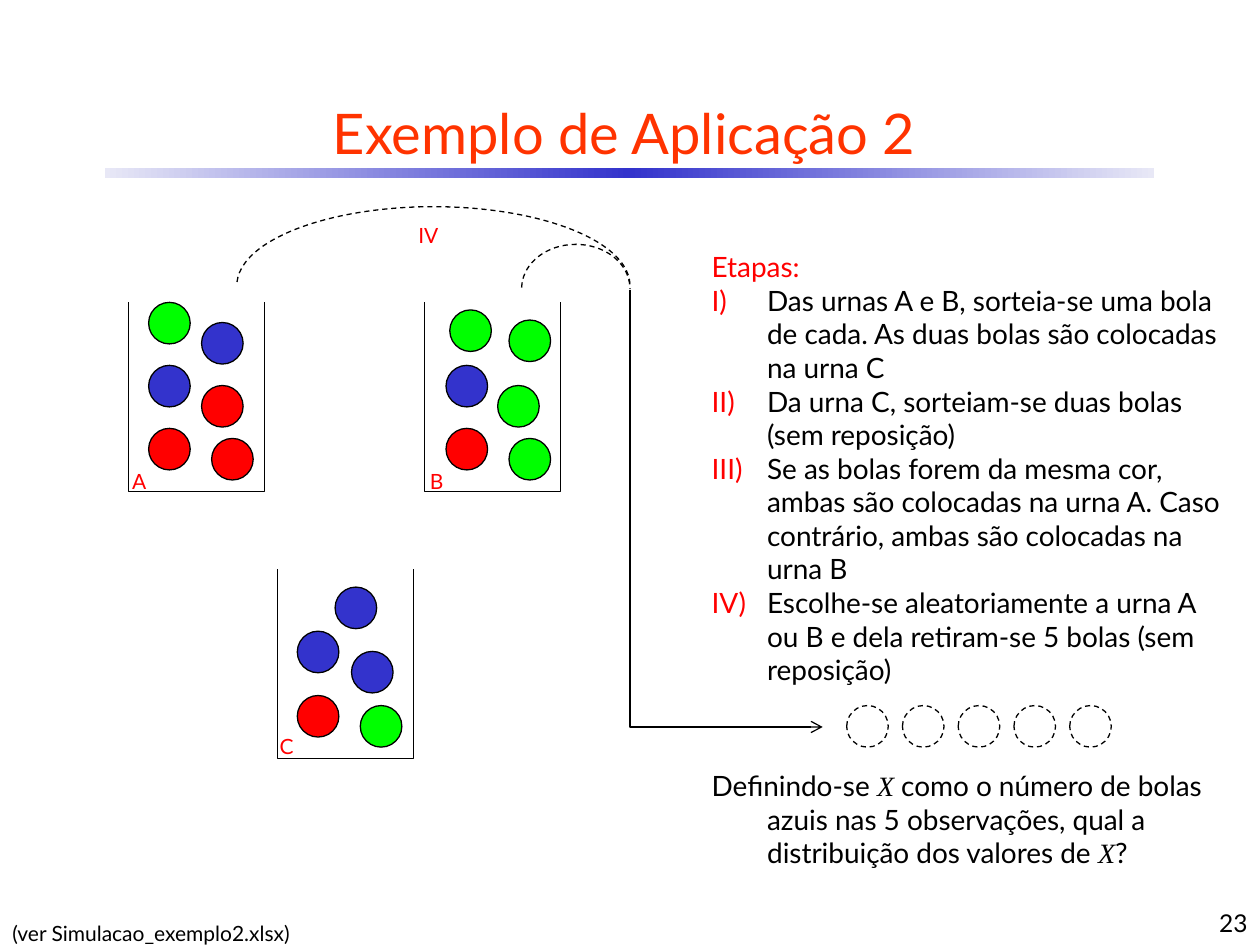
from lxml import etree
from pptx import Presentation
from pptx.dml.color import RGBColor
from pptx.enum.dml import MSO_LINE
from pptx.enum.shapes import MSO_CONNECTOR, MSO_SHAPE
from pptx.enum.text import MSO_ANCHOR, MSO_AUTO_SIZE, PP_ALIGN
from pptx.oxml.ns import qn
from pptx.util import Inches, Pt

OVAL, ARC, RECT = MSO_SHAPE.OVAL, MSO_SHAPE.ARC, MSO_SHAPE.RECTANGLE
LEFT, CENTER, RIGHT = PP_ALIGN.LEFT, PP_ALIGN.CENTER, PP_ALIGN.RIGHT
TOP, MIDDLE, BOTTOM = MSO_ANCHOR.TOP, MSO_ANCHOR.MIDDLE, MSO_ANCHOR.BOTTOM

# Content
COLORS = {"title": "FF3300", "red": "FF0000", "green": "00FF00", "blue": "3333CC",
          "pale": "E8E8F6", "black": "000000"}
SANS, SERIF = "Lato", "Times New Roman"
TITLE = "Exemplo de Aplicação 2"
STEPS_HEAD = "Etapas:"
STEPS = [
    "Das urnas A e B, sorteia-se uma bola de cada. As duas bolas são colocadas na urna C",
    "Da urna C, sorteiam-se duas bolas (sem reposição)",
    "Se as bolas forem da mesma cor, ambas são colocadas na urna A. "
    "Caso contrário, ambas são colocadas na urna B",
    "Escolhe-se aleatoriamente a urna A ou B e dela retiram-se 5 bolas (sem reposição)",
]
QUESTION = ["Definindo-se ", "X", " como o número de bolas azuis nas 5 observações, "
            "qual a distribuição dos valores de ", "X", "?"]
FOOTNOTE = "(ver Simulacao_exemplo2.xlsx)"
PAGE = "23"

# Urns: corner, label place, balls as (dx, dy, colour) from the corner
URN_W, URN_H, BALL = 1.08, 1.5, 0.33
URNS = [
    ("A", 1.02, 2.4, (0.95, 3.67, 0.3, 0.3),
     [(0.16, 0, "green"), (0.58, 0.16, "blue"), (0.16, 0.5, "blue"),
      (0.58, 0.66, "red"), (0.16, 1, "red"), (0.66, 1.08, "red")]),
    ("B", 3.37, 2.4, (3.31, 3.67, 0.31, 0.3),
     [(0.17, 0.5, "blue"), (0.58, 0.66, "green"), (0.17, 1, "red"),
      (0.67, 1.08, "green"), (0.67, 0.14, "green"), (0.2, 0.06, "green")]),
    ("C", 2.2, 4.52, (2.12, 5.77, 0.31, 0.3),
     [(0.46, 0.14, "blue"), (0.16, 0.49, "blue"), (0.59, 0.65, "blue"),
      (0.16, 1, "red"), (0.66, 1.08, "green")]),
]
ARCS = [(1.88, 1.64, 3.12, 1.25), (4.14, 1.94, 0.86, 0.7)]
ARC_ANGLES = (108.6, 0.4)
DRAWN, DRAWN_X, DRAWN_Y, DRAWN_STEP = 5, 6.72, 5.6, 0.4425
PATH_START, PATH_END = (5, 2.3), (6.53, 5.77)

prs = Presentation()
prs.slide_width, prs.slide_height = Inches(10), Inches(7.5)
s = prs.slides.add_slide(prs.slide_layouts[6])


def rgb(name):
    return RGBColor.from_string(COLORS[name])


def add(parent, tag, **attrs):
    return etree.SubElement(parent, qn(tag), attrs)


def outline(sp, dashed=False):
    sp.line.color.rgb = rgb("black")
    sp.line.width = Pt(0.75)
    if dashed:
        sp.line.dash_style = MSO_LINE.DASH


def shape(kind, box, fill=None, dashed=False):
    sp = s.shapes.add_shape(kind, *map(Inches, box))
    sp.shadow.inherit = False
    if fill:
        sp.fill.solid()
        sp.fill.fore_color.rgb = rgb(fill)
    else:
        sp.fill.background()
    outline(sp, dashed)
    return sp


def style(r, size, color, font=SANS):
    r.font.size, r.font.name = Pt(size), font
    r.font.color.rgb = rgb(color)


def indent(p, inches):
    pPr = p._p.get_or_add_pPr()
    pPr.set("marL", str(Inches(inches)))
    pPr.set("indent", str(-Inches(inches)))
    return pPr


def textbox(box, text, size, color, align=LEFT, anchor=TOP, wrap=True, grow=True):
    tf = s.shapes.add_textbox(*map(Inches, box)).text_frame
    tf.word_wrap, tf.vertical_anchor = wrap, anchor
    if grow:
        tf.auto_size = MSO_AUTO_SIZE.SHAPE_TO_FIT_TEXT
    p = tf.paragraphs[0]
    p.text, p.alignment = text, align
    for r in p.runs:
        style(r, size, color)
    return tf


# Title and gradient rule
bar = shape(RECT, (0.83, 1.33, 8.33, 0.08), "blue")
bar.line.fill.background()
bar.fill.gradient()
bar.fill.gradient_angle = 0
stops = bar._element.spPr.find(qn("a:gradFill")).find(qn("a:gsLst"))
for stop in list(stops):
    stops.remove(stop)
for pos, color in ((0, "pale"), (50, "blue"), (100, "pale")):
    add(add(stops, "a:gs", pos=str(pos * 1000)), "a:srgbClr", val=COLORS[color])
textbox((0.33, 0.67, 9.25, 0.75), TITLE, 32, "title", CENTER, MIDDLE, grow=False)

# Urns with their balls and labels
for label, x, y, label_box, balls in URNS:
    fb = s.shapes.build_freeform(Inches(x), Inches(y))
    corners = [(x, y + URN_H), (x + URN_W, y + URN_H), (x + URN_W, y)]
    fb.add_line_segments([(Inches(a), Inches(b)) for a, b in corners], close=False)
    urn = fb.convert_to_shape()
    urn.shadow.inherit = False
    urn.fill.background()
    outline(urn)
    for dx, dy, color in balls:
        shape(OVAL, (x + dx, y + dy, BALL, BALL), color)
    textbox(label_box, label, 12, "red", CENTER, wrap=False)

# Step IV: arcs from the urns, then the path to the drawn balls
for box in ARCS:
    arc = shape(ARC, box, dashed=True)
    for i, angle in enumerate(ARC_ANGLES):
        arc.adjustments[i] = angle
textbox((3.22, 1.72, 0.36, 0.3), "IV", 12, "red", CENTER, wrap=False)

(x1, y1), (x2, y2) = PATH_START, PATH_END
path_w, path_h = y2 - y1, x2 - x1  # size before the quarter turn
left, top = (x1 + x2 - path_w) / 2, (y1 + y2 - path_h) / 2
elbow = s.shapes.add_connector(MSO_CONNECTOR.ELBOW, Inches(left), Inches(top),
                               Inches(left + path_w), Inches(top + path_h))
outline(elbow)
spPr = elbow._element.spPr
spPr.find(qn("a:prstGeom")).set("prst", "bentConnector2")
xfrm = spPr.find(qn("a:xfrm"))
xfrm.set("rot", str(270 * 60000))
xfrm.set("flipH", "1")
add(spPr.find(qn("a:ln")), "a:tailEnd", type="arrow")
add(spPr, "a:effectLst")

for i in range(DRAWN):
    shape(OVAL, (DRAWN_X + i * DRAWN_STEP, DRAWN_Y, BALL, BALL), dashed=True)

# Steps
tf = textbox((5.55, 1.8, 4.3, 3.74), STEPS_HEAD, 16, "red")
tf.paragraphs[0].line_spacing = 1.5
indent(tf.paragraphs[0], 0.21)
for step in STEPS:
    p = tf.add_paragraph()
    p.text = step
    style(p.runs[0], 16, "black")
    pPr = indent(p, 0.44)
    add(add(pPr, "a:buClr"), "a:srgbClr", val=COLORS["red"])
    add(pPr, "a:buAutoNum", type="romanUcParenR")

# Question
p = textbox((5.55, 6.05, 4.31, 0.91), "", 16, "black").paragraphs[0]
indent(p, 0.44)
for part in QUESTION:
    r = p.add_run()
    r.text = part
    is_variable = part == "X"
    style(r, 16, "black", SERIF if is_variable else SANS)
    r.font.italic = is_variable

# Footer
textbox((7.92, 7.14, 2.08, 0.35), PAGE, 14, "black", RIGHT, BOTTOM, grow=False)
p = textbox((0, 7.16, 2.63, 0.37), FOOTNOTE, 12, "black").paragraphs[0]
p.line_spacing = 1.5
indent(p, 0.39)

prs.save("out.pptx")
